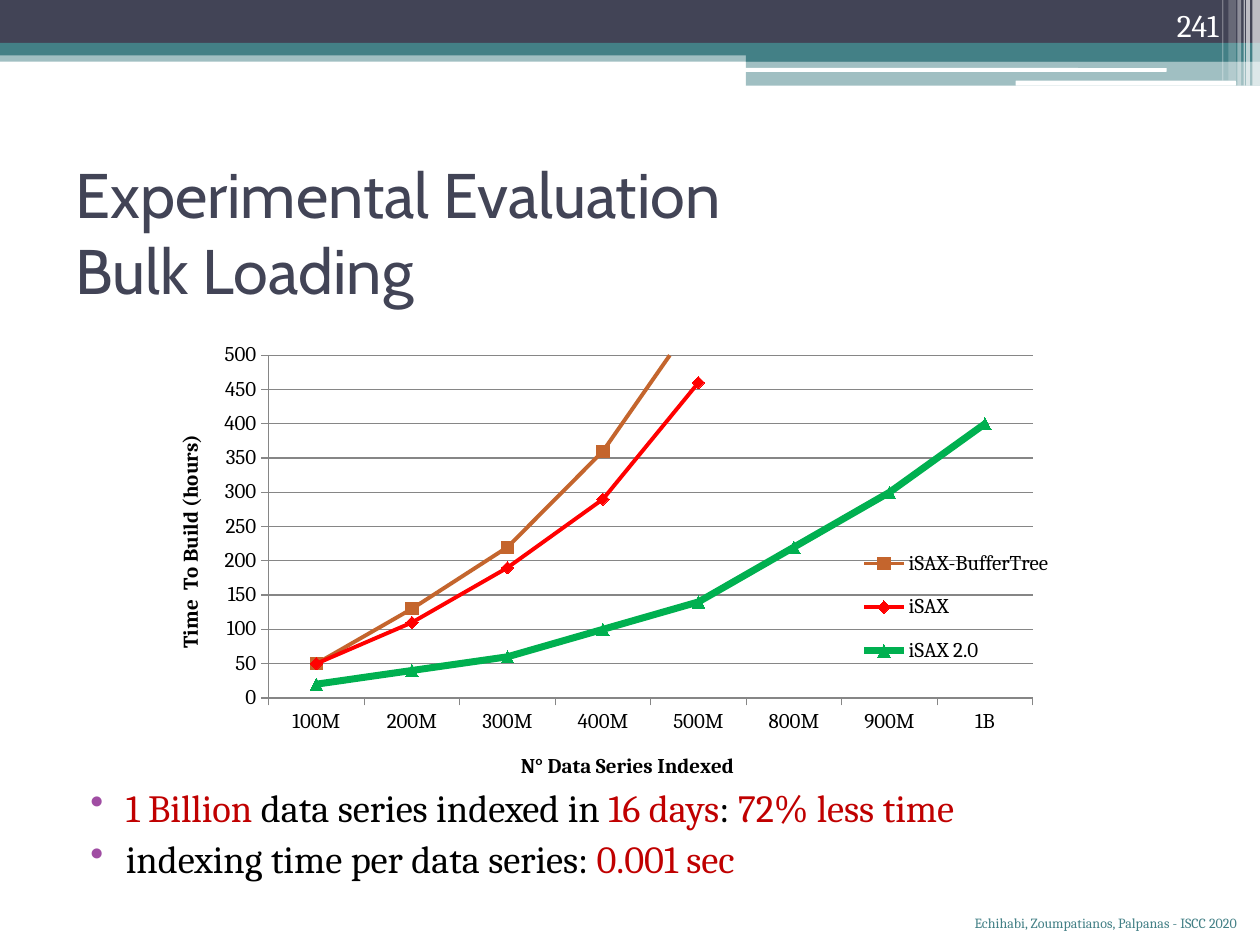
"""Build the bulk loading evaluation slide with its line chart."""
import pptx
import pptx.chart.data
import pptx.dml.color
import pptx.enum.chart
import pptx.enum.shapes
import pptx.enum.text
import pptx.oxml
import pptx.oxml.ns
import pptx.util
from lxml import etree

THEME = {
    "navy": "424456", "teal": "438086", "white": "FFFFFF", "black": "000000",
    "accent": "C00000", "bullet": "A04DA3", "grid": "868686",
    "orange": "C4652D", "red": "FF0000", "green": "00B050",
    "heading font": "Cabin", "body font": "Cambria",
    "title size": 36, "body size": 22, "number size": 18,
    "chart size": 12, "footer size": 8,
}
WIDTH, HEIGHT = 10, 7.5
STEP = 5.92

BANDS = [
    (0, 0.4, WIDTH, 0.09, "teal", 50),
    (0, 0, WIDTH, 0.34, "navy", 100),
    (0, 0.34, WIDTH, 0.1, "teal", 100),
    (STEP, 0.39, WIDTH - STEP, 0.1, "teal", 100),
    (STEP, 0.48, WIDTH - STEP, 0.2, "teal", 50),
]
PILLS = [(5.91, 0.54, 3.35, 0.03), (8.06, 0.64, 1.75, 0.04)]
STRIPES = [
    (9.94, 0.06, 0.68, 65), (9.89, 0.03, 0.68, 65), (9.87, 0.01, 0.68, 60),
    (9.82, 0.03, 0.68, 40), (9.75, 0.06, 0.64, 20), (9.7, 0.01, 0.64, 30),
]

TITLE = ["Experimental Evaluation", "Bulk Loading"]
FINDINGS = [
    [("1 Billion", "accent"), (" data series indexed in ", "black"),
     ("16 days", "accent"), (":", "black"), (" 72% less time", "accent")],
    [("indexing time per data series: ", "black"), ("0.001 sec", "accent")],
]
FOOTER = "Echihabi, Zoumpatianos, Palpanas - ISCC 2020"
PAGE_NUMBER = "241"

INDEXED = ["100M", "200M", "300M", "400M", "500M", "800M", "900M", "1B"]
BUILD_TIMES = [
    ("iSAX-BufferTree", [50, 130, 220, 360, 560, None, None, None], "orange", 2.25, "SQUARE"),
    ("iSAX", [50, 110, 190, 290, 460, None, None, None], "red", 2.25, "DIAMOND"),
    ("iSAX 2.0", [20, 40, 60, 100, 140, 220, 300, 400], "green", 4, "TRIANGLE"),
]


def inches(*lengths):
    return [pptx.util.Inches(length) for length in lengths]


def color(name):
    return pptx.dml.color.RGBColor.from_string(THEME[name])


def set_font(font, size, tint, face="body font", bold=False):
    font.name, font.size, font.bold = THEME[face], pptx.util.Pt(THEME[size]), bold
    font.color.rgb = color(tint)


def add_run(paragraph, words, size, tint, face="body font"):
    run = paragraph.add_run()
    run.text = words
    set_font(run.font, size, tint, face)


def add_bar(slide, area, tint, opacity=100, kind="RECTANGLE"):
    bar = slide.shapes.add_shape(pptx.enum.shapes.MSO_SHAPE[kind], *inches(*area))
    bar.shadow.inherit = False
    bar.line.fill.background()
    bar.fill.solid()
    bar.fill.fore_color.rgb = color(tint)
    if opacity < 100:
        shade = bar.fill._xPr.find(".//" + pptx.oxml.ns.qn("a:srgbClr"))
        etree.SubElement(shade, pptx.oxml.ns.qn("a:alpha"), val=str(opacity * 1000))


def add_text(slide, area, anchor="TOP"):
    frame = slide.shapes.add_textbox(*inches(*area)).text_frame
    frame.word_wrap = True
    frame.vertical_anchor = pptx.enum.text.MSO_ANCHOR[anchor]
    return frame


def add_corner_note(slide, area, words, size, tint, anchor):
    paragraph = add_text(slide, area, anchor).paragraphs[0]
    paragraph.alignment = pptx.enum.text.PP_ALIGN.RIGHT
    add_run(paragraph, words, size, tint)


def add_header(slide):
    for *area, tint, opacity in BANDS:
        add_bar(slide, area, tint, opacity)
    for area in PILLS:
        add_bar(slide, area, "white", kind="ROUNDED_RECTANGLE")
    for left, width, height, opacity in STRIPES:
        add_bar(slide, (left, 0, width, height), "white", opacity)


def add_title(slide):
    heading = add_text(slide, (0.5, 1.25, 9, 1.17), "MIDDLE").paragraphs[0]
    for index, words in enumerate(TITLE):
        if index:
            heading.add_line_break()
        add_run(heading, words, "title size", "navy", "heading font")


def add_findings(slide):
    frame = add_text(slide, (0.5, 6.17, 9, 1.25))
    for index, finding in enumerate(FINDINGS):
        paragraph = frame.add_paragraph() if index else frame.paragraphs[0]
        properties = paragraph._p.get_or_add_pPr()
        properties.set("marL", str(pptx.util.Inches(0.4)))
        properties.set("indent", str(pptx.util.Inches(-0.28)))
        if index:
            paragraph.space_before = pptx.util.Pt(3)
        tint = etree.SubElement(properties, pptx.oxml.ns.qn("a:buClr"))
        etree.SubElement(tint, pptx.oxml.ns.qn("a:srgbClr"), val=THEME["bullet"])
        etree.SubElement(properties, pptx.oxml.ns.qn("a:buChar"), char="•")
        for words, shade in finding:
            add_run(paragraph, words, "body size", shade)


def place(part, index, **settings):
    tag = pptx.oxml.ns.qn
    for old in part.findall(tag("c:layout")):
        part.remove(old)
    layout = etree.Element(tag("c:layout"))
    manual = etree.SubElement(layout, tag("c:manualLayout"))
    for name, value in settings.items():
        etree.SubElement(manual, tag("c:" + name), val=str(value))
    part.insert(index, layout)


def style_axis(axis, words, x, y):
    axis.major_tick_mark = pptx.enum.chart.XL_TICK_MARK.OUTSIDE
    axis.format.line.color.rgb = color("grid")
    paragraph = axis.axis_title.text_frame.paragraphs[0]
    run = paragraph.add_run()
    run.text = words
    set_font(run.font, "chart size", "black", bold=True)
    place(axis.axis_title._element, 1, xMode="edge", yMode="edge", x=x, y=y)


def add_build_chart(slide):
    figures = pptx.chart.data.CategoryChartData()
    figures.categories = INDEXED
    for name, hours, *_ in BUILD_TIMES:
        figures.add_series(name, hours)
    chart = slide.shapes.add_chart(
        pptx.enum.chart.XL_CHART_TYPE.LINE_MARKERS, *inches(0.92, 2.58, 7.58, 4), figures).chart
    chart.has_title = False
    set_font(chart.font, "chart size", "black")
    chart.plots[0].vary_by_categories = False
    for series, (_, _, tint, weight, marker) in zip(chart.plots[0].series, BUILD_TIMES):
        series.smooth = False
        series.format.line.color.rgb = color(tint)
        series.format.line.width = pptx.util.Pt(weight)
        series.marker.style = pptx.enum.chart.XL_MARKER_STYLE[marker]
        series.marker.size = 7
        series.marker.format.fill.solid()
        series.marker.format.fill.fore_color.rgb = color(tint)
        series.marker.format.line.color.rgb = color(tint)
    style_axis(chart.category_axis, "N° Data Series Indexed", 0.42, 0.84)
    hours_axis = chart.value_axis
    style_axis(hours_axis, "Time  To Build (hours)", 0.06, 0.21)
    hours_axis.minimum_scale, hours_axis.maximum_scale, hours_axis.major_unit = 0, 500, 50
    hours_axis.major_gridlines.format.line.color.rgb = color("grid")
    chart.has_legend = True
    chart.legend.position = pptx.enum.chart.XL_LEGEND_POSITION.TOP
    chart.legend.include_in_layout = False
    place(chart.legend._element, 1, xMode="edge", yMode="edge", x=0.77, y=0.41, w=0.22, h=0.3)
    place(chart._chartSpace.chart.plotArea, 0, layoutTarget="inner",
          xMode="edge", yMode="edge", x=0.16, y=0.06, w=0.8, h=0.68)


def main():
    deck = pptx.Presentation()
    deck.slide_width, deck.slide_height = inches(WIDTH, HEIGHT)
    slide = deck.slides.add_slide(deck.slide_layouts[6])
    add_header(slide)
    add_title(slide)
    add_corner_note(slide, (6.33, 7.21, 3.59, 0.29), FOOTER, "footer size", "teal", "TOP")
    add_corner_note(slide, (8.94, 0, 0.83, 0.4), PAGE_NUMBER, "number size", "white", "BOTTOM")
    add_build_chart(slide)
    add_findings(slide)
    deck.save("out.pptx")


if __name__ == "__main__":
    main()
